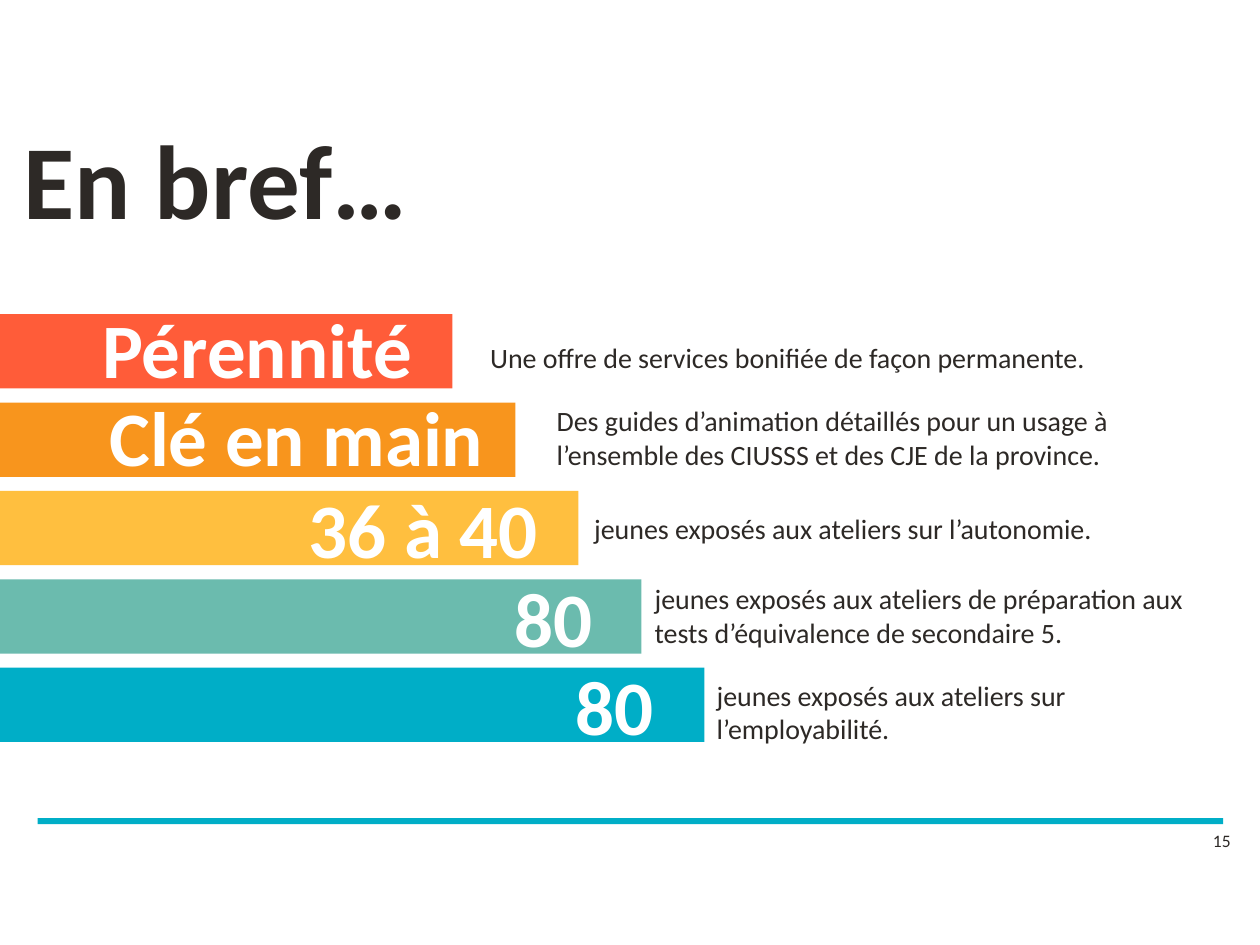
from pptx import Presentation
from pptx.dml.color import RGBColor
from pptx.enum.shapes import MSO_SHAPE
from pptx.enum.text import MSO_ANCHOR, MSO_AUTO_SIZE, PP_ALIGN
from pptx.util import Pt

INK = RGBColor(0x2D, 0x29, 0x26)
WHITE = RGBColor(0xFF, 0xFF, 0xFF)
RED = RGBColor(0xFF, 0x5C, 0x39)
ORANGE = RGBColor(0xF8, 0x95, 0x1D)
YELLOW = RGBColor(0xFF, 0xBF, 0x3F)
GREEN = RGBColor(0x6B, 0xBB, 0xAE)
BLUE = RGBColor(0x00, 0xAE, 0xC7)

BAR_TOP, BAR_STEP, BAR_HEIGHT = 179.5, 50.5, 42.5
BAR_WIDTH, BAR_GROWTH = 258.5, 36

BARS = [
    (RED, "Pérennité", (49, 169, 196, 60.5),
     "Une offre de services bonifiée de façon permanente.", (273, 191, 410, 26.5)),
    (ORANGE, "Clé en main", (51, 219, 237, 60.5),
     "Des guides d’animation détaillés pour un usage à l’ensemble des CIUSSS "
     "et des CJE de la province.", (311, 227, 383, 46)),
    (YELLOW, "36 à 40", (145.5, 271.5, 193, 60.5),
     "jeunes exposés aux ateliers sur l’autonomie.", (332.5, 288.5, 335.5, 26.5)),
    (GREEN, "80", (281, 322.5, 71, 60.5),
     "jeunes exposés aux ateliers de préparation aux tests d’équivalence de "
     "secondaire 5.", (367, 329, 328.5, 46)),
    (BLUE, "80", (270, 373, 162, 60.5),
     "jeunes exposés aux ateliers sur l’employabilité.", (402.5, 384, 294, 46)),
]


class SlideBuilder:
    """Holds the text style and the current page, and adds elements to it."""

    base = {"name": "Calibri", "size": Pt(16), "bold": False}

    def __init__(self, page):
        self.page = page

    def bar(self, left, top, width, height, color):
        shape = self.page.shapes.add_shape(
            MSO_SHAPE.RECTANGLE, Pt(left), Pt(top), Pt(width), Pt(height))
        shape.shadow.inherit = False
        shape.fill.solid()
        shape.fill.fore_color.rgb = color
        shape.line.fill.background()

    def text(self, place, words, color=INK, align=PP_ALIGN.LEFT,
             fit=MSO_AUTO_SIZE.NONE, **changes):
        box = self.page.shapes.add_textbox(*map(Pt, place))
        frame = box.text_frame
        frame_format = {"word_wrap": True, "auto_size": fit,
                        "vertical_anchor": MSO_ANCHOR.TOP}
        for name, value in frame_format.items():
            setattr(frame, name, value)
        para = frame.paragraphs[0]
        para.alignment = align
        span = para.add_run()
        span.text = words
        for name, value in {**self.base, **changes}.items():
            setattr(span.font, name, value)
        span.font.color.rgb = color


def main():
    deck = Presentation()
    deck.slide_width, deck.slide_height = Pt(720), Pt(540)
    builder = SlideBuilder(deck.slides.add_slide(deck.slide_layouts[6]))

    builder.bar(21.5, 467.5, 677.5, 3.5, BLUE)
    builder.text((686, 471, 34, 29), "15", size=Pt(10))
    builder.text((6.5, 62, 713.5, 61), "En bref…", size=Pt(60), bold=True)

    for index, (color, label, label_place, caption, caption_place) in enumerate(BARS):
        builder.bar(0, BAR_TOP + index * BAR_STEP,
                    BAR_WIDTH + index * BAR_GROWTH, BAR_HEIGHT, color)
        builder.text(caption_place, caption, fit=MSO_AUTO_SIZE.SHAPE_TO_FIT_TEXT)
        builder.text(label_place, label, WHITE, PP_ALIGN.CENTER,
                     MSO_AUTO_SIZE.SHAPE_TO_FIT_TEXT, size=Pt(44), bold=True)

    deck.save("out.pptx")


if __name__ == "__main__":
    main()
